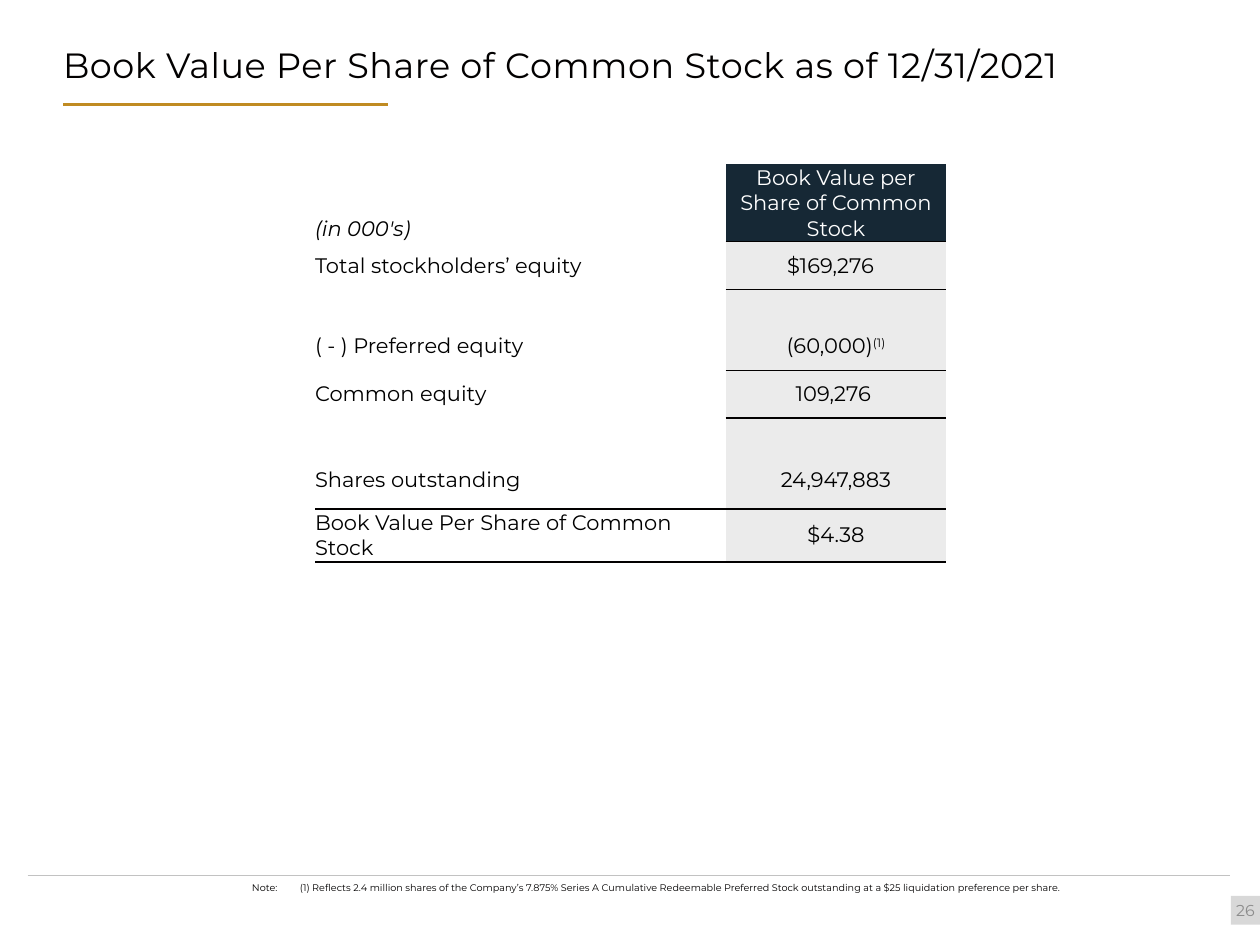
"""Build the book value per share slide."""
import pptx
import pptx.dml.color
import pptx.enum.shapes
import pptx.enum.text
import pptx.oxml.ns
import pptx.util
from lxml import etree
from pptx.util import Inches

FONT = "Montserrat"
COLORS = {
    "text": "020000",
    "black": "000000",
    "white": "FFFFFF",
    "navy": "162835",
    "gold": "C08B22",
    "band": "EBEBEB",
    "rule": "C2C2C2",
    "badge": "D8D8D8",
    "page_number": "8C8C8C",
}
ROWS = [
    ("(in 000's)", "Book Value per Share of Common Stock"),
    ("Total stockholders’ equity", "$169,276  "),
    ("", ""),
    ("( - ) Preferred equity", "(60,000)"),
    ("Common equity", "109,276 "),
    ("", ""),
    ("Shares outstanding", "24,947,883"),
    ("Book Value Per Share of Common Stock", "$4.38"),
]
ROW_HEIGHTS = [0.62, 0.38, 0.26, 0.38, 0.38, 0.26, 0.46, 0.42]
COLUMN_WIDTHS = [3.26, 1.75]
RULES_BELOW = {(0, 1): 0.5, (3, 1): 1, (6, 0): 1, (6, 1): 1, (7, 0): 1, (7, 1): 1}
NO_TABLE_STYLE = "{2D5ABB26-0587-4C30-8999-92F81FD0307C}"
ALIGN = pptx.enum.text.PP_ALIGN
ANCHOR = pptx.enum.text.MSO_ANCHOR


def rgb(name):
    """Return the named colour."""
    return pptx.dml.color.RGBColor.from_string(COLORS[name])


def add_element(parent, tag, **attributes):
    """Append a drawing element to a parent."""
    return etree.SubElement(parent, pptx.oxml.ns.qn(tag), attributes)


def format_paragraph(paragraph, size, color, align=ALIGN.LEFT, italic=False):
    """Set the alignment and font of a paragraph."""
    paragraph.alignment = align
    font = paragraph.font
    font.name = FONT
    font.size = pptx.util.Pt(size)
    font.italic = italic
    font.color.rgb = rgb(color)


def clear_margins(target):
    """Remove the inner margins of a text frame or cell."""
    target.margin_left = target.margin_right = 0
    target.margin_top = target.margin_bottom = 0


def add_rule(slide, left, right, top, color, width):
    """Draw a horizontal line."""
    line = slide.shapes.add_connector(
        pptx.enum.shapes.MSO_CONNECTOR.STRAIGHT,
        Inches(left), Inches(top), Inches(right), Inches(top))
    line.line.color.rgb = rgb(color)
    line.line.width = pptx.util.Pt(width)
    add_element(line._element.spPr, "a:effectLst")


def add_title(slide, text):
    """Place and format the title placeholder."""
    title = slide.shapes.title
    title.left, title.top = Inches(0.5), Inches(0.21)
    title.width, title.height = Inches(9.27), Inches(0.85)
    frame = title.text_frame
    frame.margin_left = 0
    frame.vertical_anchor = ANCHOR.TOP
    frame.auto_size = pptx.enum.text.MSO_AUTO_SIZE.NONE
    frame.text = text
    paragraph = frame.paragraphs[0]
    paragraph.line_spacing = pptx.util.Pt(30)
    format_paragraph(paragraph, 20, "text")
    paragraph.runs[0]._r.get_or_add_rPr().set("spc", "30")


def add_page_number(slide, number):
    """Add the page number badge at the right edge."""
    badge = slide.shapes.add_shape(
        pptx.enum.shapes.MSO_SHAPE.RECTANGLE,
        Inches(9.77), Inches(7.11), Inches(0.23), Inches(0.23))
    badge.shadow.inherit = False
    badge.fill.solid()
    badge.fill.fore_color.rgb = rgb("badge")
    badge.line.fill.background()
    frame = badge.text_frame
    clear_margins(frame)
    frame.word_wrap = False
    frame.vertical_anchor = ANCHOR.MIDDLE
    frame.text = number
    format_paragraph(frame.paragraphs[0], 9, "page_number", ALIGN.CENTER)


def add_border(cell, tag, width):
    """Add one solid border to a cell."""
    properties = cell._tc.get_or_add_tcPr()
    border = add_element(properties, tag, w=str(pptx.util.Pt(width)))
    fill = add_element(border, "a:solidFill")
    add_element(fill, "a:srgbClr", val=COLORS["text"])


def format_cell(cell, text, row, column):
    """Fill in one table cell."""
    header = row == 0
    clear_margins(cell)
    cell.vertical_anchor = ANCHOR.BOTTOM if header else ANCHOR.MIDDLE
    if (row - 1, column) in RULES_BELOW:
        add_border(cell, "a:lnT", RULES_BELOW[row - 1, column])
    if (row, column) in RULES_BELOW:
        add_border(cell, "a:lnB", RULES_BELOW[row, column])
    if column:
        cell.fill.solid()
        cell.fill.fore_color.rgb = rgb("navy" if header else "band")
    else:
        cell.fill.background()
    cell.text = text
    format_paragraph(
        cell.text_frame.paragraphs[0], 12,
        "white" if header and column else "black",
        ALIGN.CENTER if column else ALIGN.LEFT,
        italic=header and not column)


def add_book_value_table(slide):
    """Add the table of equity and shares."""
    frame = slide.shapes.add_table(
        len(ROWS), len(COLUMN_WIDTHS), Inches(2.5), Inches(1.3),
        Inches(sum(COLUMN_WIDTHS)), Inches(sum(ROW_HEIGHTS)))
    table = frame.table
    table.first_row = table.horz_banding = False
    table._tbl.tblPr.find(pptx.oxml.ns.qn("a:tableStyleId")).text = NO_TABLE_STYLE
    for column, width in zip(table.columns, COLUMN_WIDTHS):
        column.width = Inches(width)
    for row, height in zip(table.rows, ROW_HEIGHTS):
        row.height = Inches(height)
    for row, texts in enumerate(ROWS):
        for column, text in enumerate(texts):
            format_cell(table.cell(row, column), text, row, column)
    marker = table.cell(3, 1).text_frame.paragraphs[0].add_run()
    marker.text = "(1)"
    marker._r.get_or_add_rPr().set("baseline", "30000")


def add_note(slide, text):
    """Add the tabbed footnote."""
    box = slide.shapes.add_textbox(Inches(2), Inches(7), Inches(7.63), Inches(0.09))
    frame = box.text_frame
    clear_margins(frame)
    frame.word_wrap = True
    frame.text = text
    paragraph = frame.paragraphs[0]
    tabs = add_element(paragraph._p.get_or_add_pPr(), "a:tabLst")
    add_element(tabs, "a:tab", pos=str(Inches(0.38)), algn="l")
    format_paragraph(paragraph, 5.5, "text")


def main():
    """Build and save the slide."""
    presentation = pptx.Presentation()
    presentation.slide_width = Inches(10)
    presentation.slide_height = Inches(7.5)
    slide = presentation.slides.add_slide(presentation.slide_layouts[5])
    add_rule(slide, 0.22, 9.76, 6.95, "rule", 0.5)
    add_rule(slide, 0.5, 3.08, 0.83, "gold", 1.5)
    add_title(slide, "Book Value Per Share of Common Stock as of 12/31/2021")
    add_page_number(slide, "26")
    add_book_value_table(slide)
    add_note(slide, "Note: \t(1) Reflects 2.4 million shares of the Company’s 7.875% "
                    "Series A Cumulative Redeemable Preferred Stock outstanding "
                    "at a $25 liquidation preference per share.")
    presentation.save("out.pptx")


if __name__ == "__main__":
    main()
